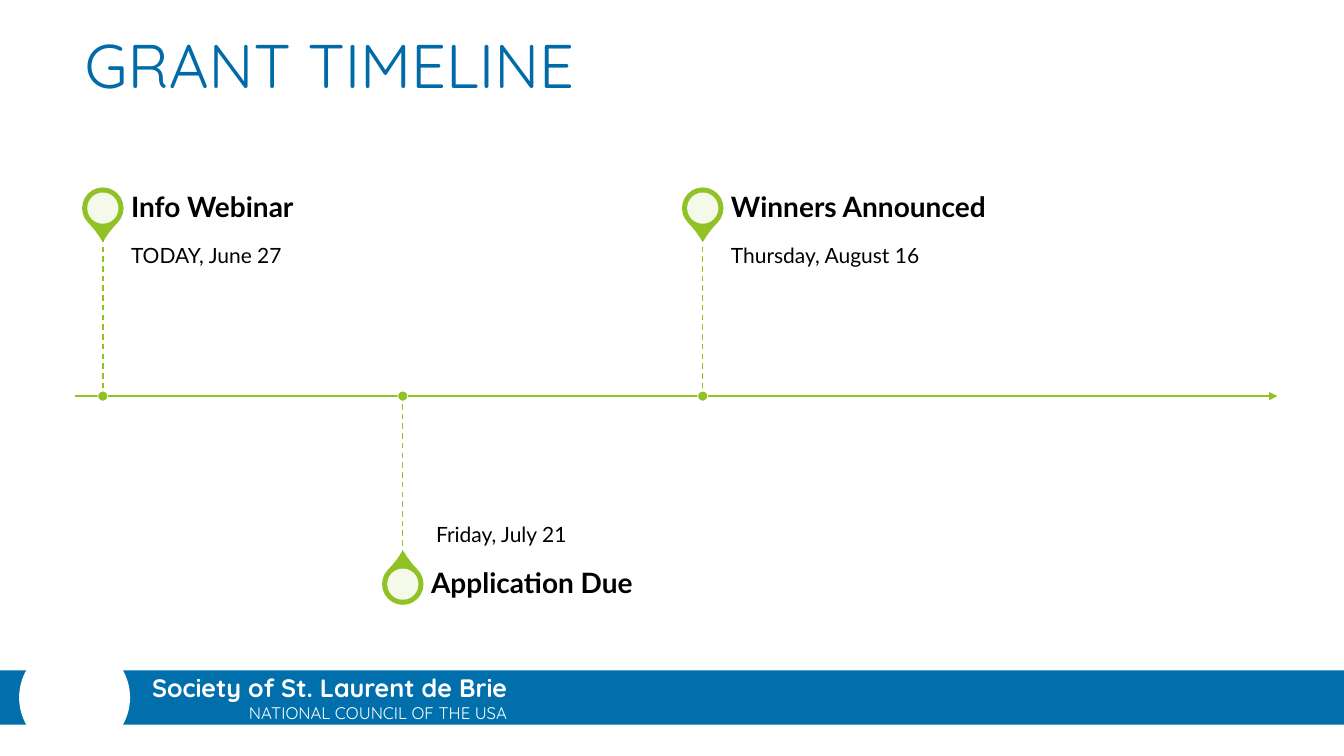
from lxml.etree import SubElement
from pptx import Presentation
from pptx.dml.color import RGBColor
from pptx.enum.dml import MSO_LINE_DASH_STYLE as Dash
from pptx.enum.shapes import MSO_CONNECTOR as Connector, MSO_SHAPE as Preset
from pptx.enum.text import MSO_ANCHOR as Anchor, PP_ALIGN as Align
from pptx.oxml.ns import qn
from pptx.util import Inches, Pt

WIDTH, HEIGHT = 13.33, 7.5
GREEN, BLUE, TITLE_BLUE, WHITE, BLACK = "90C226", "016FAC", "006BA8", "FFFFFF", "000000"

# Timeline grid: one column per event, rows measured from the axis
MARGIN, AXIS = 0.74, 3.93
FIRST_COLUMN, COLUMN_STEP = 1.02, 2.975
STEM, PIN_OFFSET = 1.58, 1.865
ABOVE, BELOW = -1, 1
LABEL_GAP, LABEL_WIDTH, HEADING_HEIGHT = 0.28, 4.96, 0.56
EVENTS = [
    ("Info Webinar", "TODAY, June 27", ABOVE),
    ("Application Due", "Friday, July 21", BELOW),
    ("Winners Announced", "Thursday, August 16", ABOVE),
]


def colour(hex_string):
    return RGBColor.from_string(hex_string)


def apply(target, values):
    for name, value in values.items():
        setattr(target, name, value)


def write(box, text, size, hex_string, font="Lato", bold=False, align=Align.LEFT,
          anchor=Anchor.TOP, insets=(0.1, 0.05, 0.1, 0.05), spacing=1.0):
    left, top, right, bottom = map(Inches, insets)
    frame = box.text_frame
    apply(frame, {"word_wrap": True, "vertical_anchor": anchor,
                  "margin_left": left, "margin_top": top,
                  "margin_right": right, "margin_bottom": bottom})
    para = frame.paragraphs[0]
    apply(para, {"alignment": align, "line_spacing": spacing})
    span = para.add_run()
    span.text = text
    apply(span.font, {"name": font, "size": Pt(size), "bold": bold})
    span.font.color.rgb = colour(hex_string)


def add_text(page, left, top, width, height, *content, **style):
    box = page.shapes.add_textbox(*map(Inches, (left, top, width, height)))
    write(box, *content, **style)


def add_shape(page, preset, left, top, width, height, fill, line=None, weight=0):
    shape = page.shapes.add_shape(preset, *map(Inches, (left, top, width, height)))
    shape.shadow.inherit = False
    shape.fill.solid()
    shape.fill.fore_color.rgb = colour(fill)
    if line:
        shape.line.color.rgb = colour(line)
        shape.line.width = Pt(weight)
    else:
        shape.line.fill.background()
    return shape


def add_centred(page, preset, x, y, size, *paint):
    return add_shape(page, preset, x - size / 2, y - size / 2, size, size, *paint)


def add_line(page, start, end, weight, dash=None, arrow=False):
    line = page.shapes.add_connector(Connector.STRAIGHT, *map(Inches, start + end))
    line.line.color.rgb = colour(GREEN)
    apply(line.line, {"width": Pt(weight), "dash_style": dash})
    if arrow:
        SubElement(line.line._get_or_add_ln(), qn("a:tailEnd"), type="triangle")
    SubElement(line._element.spPr, qn("a:effectLst"))


def add_footer(page):
    add_shape(page, Preset.RECTANGLE, 0, 6.65, WIDTH, 0.54, BLUE)
    add_text(page, 1.41, 6.62, 3.74, 0.4, "Society of St. Laurent de Brie",
             18, WHITE, font="Quicksand", bold=True)
    add_text(page, 1.08, 6.92, 4.05, 0.3, "NATIONAL COUNCIL OF THE USA",
             12, WHITE, font="Quicksand", align=Align.RIGHT)
    add_centred(page, Preset.OVAL, 0.74, 6.92, 1.1, WHITE)


def add_title(page, text):
    title = page.shapes.title
    apply(title, {"left": Inches(MARGIN), "top": Inches(0.22),
                  "width": Inches(WIDTH - 1.4), "height": Inches(1.44)})
    write(title, text, 44, TITLE_BLUE, font="Quicksand")


def add_pin(page, x, y, side):
    drop = add_centred(page, Preset.TEAR, x, y, 0.39, GREEN, GREEN, 1.5)
    drop.adjustments[0] = 1.15
    drop.rotation = 135 if side == ABOVE else 315
    hole = add_centred(page, Preset.OVAL, x, y, 0.31, WHITE)
    fill = hole._element.spPr.find(qn("a:solidFill"))
    SubElement(fill[0], qn("a:alpha"), val="90000")


def add_event(page, column, heading, date, side):
    x = FIRST_COLUMN + column * COLUMN_STEP
    pin_y = AXIS + side * PIN_OFFSET
    label_x = x + LABEL_GAP
    add_pin(page, x, pin_y, side)

    # The date sits at the pin's end of the stem
    if side == ABOVE:
        date_top, anchor, insets = AXIS - STEM, Anchor.TOP, (0, 0.1, 0.1, 0.16)
    else:
        date_top, anchor, insets = AXIS, Anchor.BOTTOM, (0.05, 0.16, 0, 0.1)
    add_text(page, label_x, date_top, LABEL_WIDTH, STEM, date, 15, BLACK,
             anchor=anchor, insets=insets, spacing=0.9)
    add_text(page, label_x, pin_y - HEADING_HEIGHT / 2, LABEL_WIDTH, HEADING_HEIGHT,
             heading, 20, BLACK, bold=True, anchor=Anchor.MIDDLE,
             insets=(0, 0, 0.14, 0), spacing=0.9)

    add_line(page, (x, AXIS + side * STEM), (x, AXIS), 1, dash=Dash.DASH)
    add_centred(page, Preset.OVAL, x, AXIS, 0.1, GREEN, WHITE, 0.5)


def main():
    deck = Presentation()
    apply(deck, {"slide_width": Inches(WIDTH), "slide_height": Inches(HEIGHT)})
    page = deck.slides.add_slide(deck.slide_layouts[5])

    add_footer(page)
    add_title(page, "GRANT TIMELINE")

    # Axis first, so that the event dots cover it
    add_line(page, (MARGIN, AXIS), (WIDTH - 0.66, AXIS), 1.5, arrow=True)
    for column, event in enumerate(EVENTS):
        add_event(page, column, *event)

    deck.save("out.pptx")


if __name__ == "__main__":
    main()
